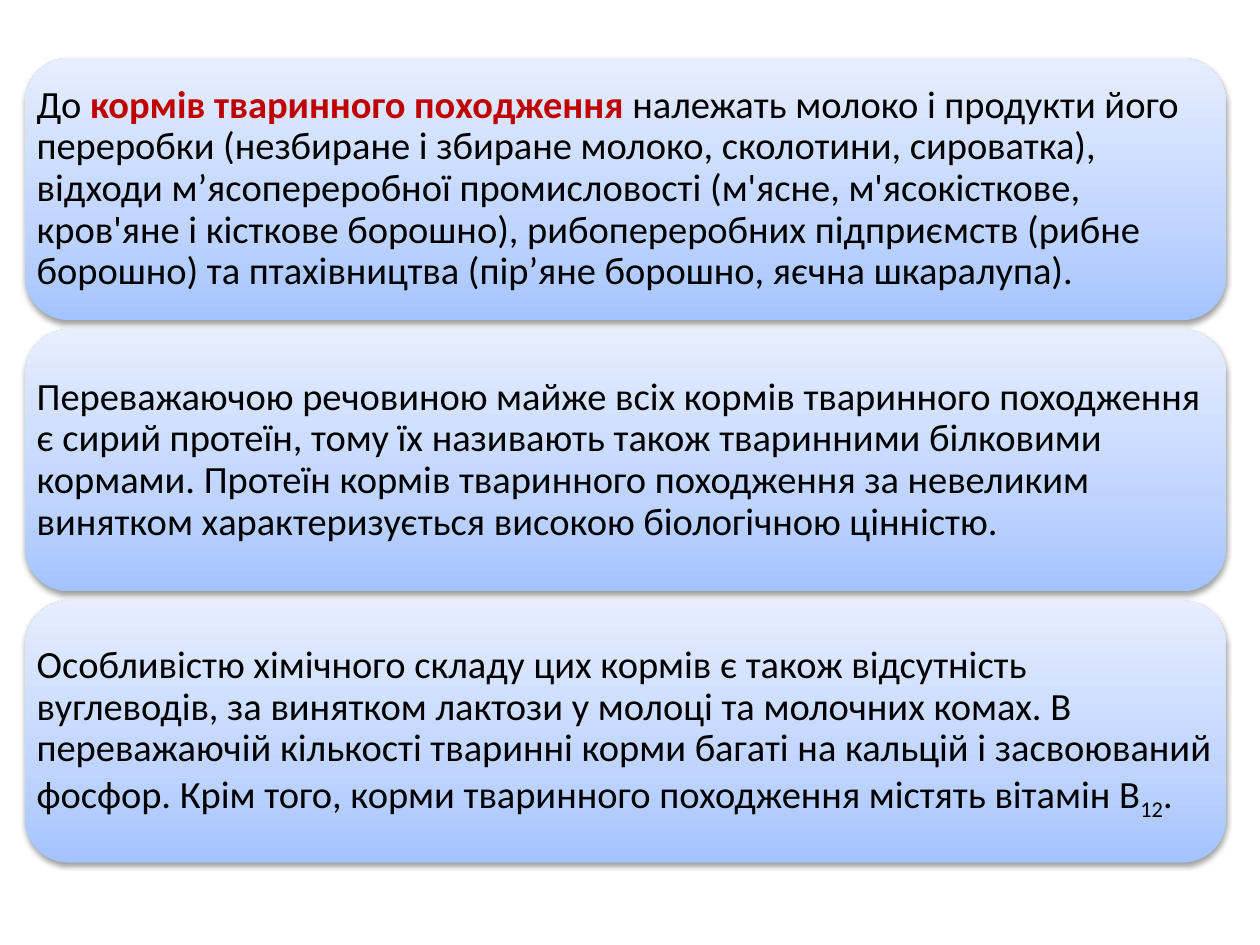
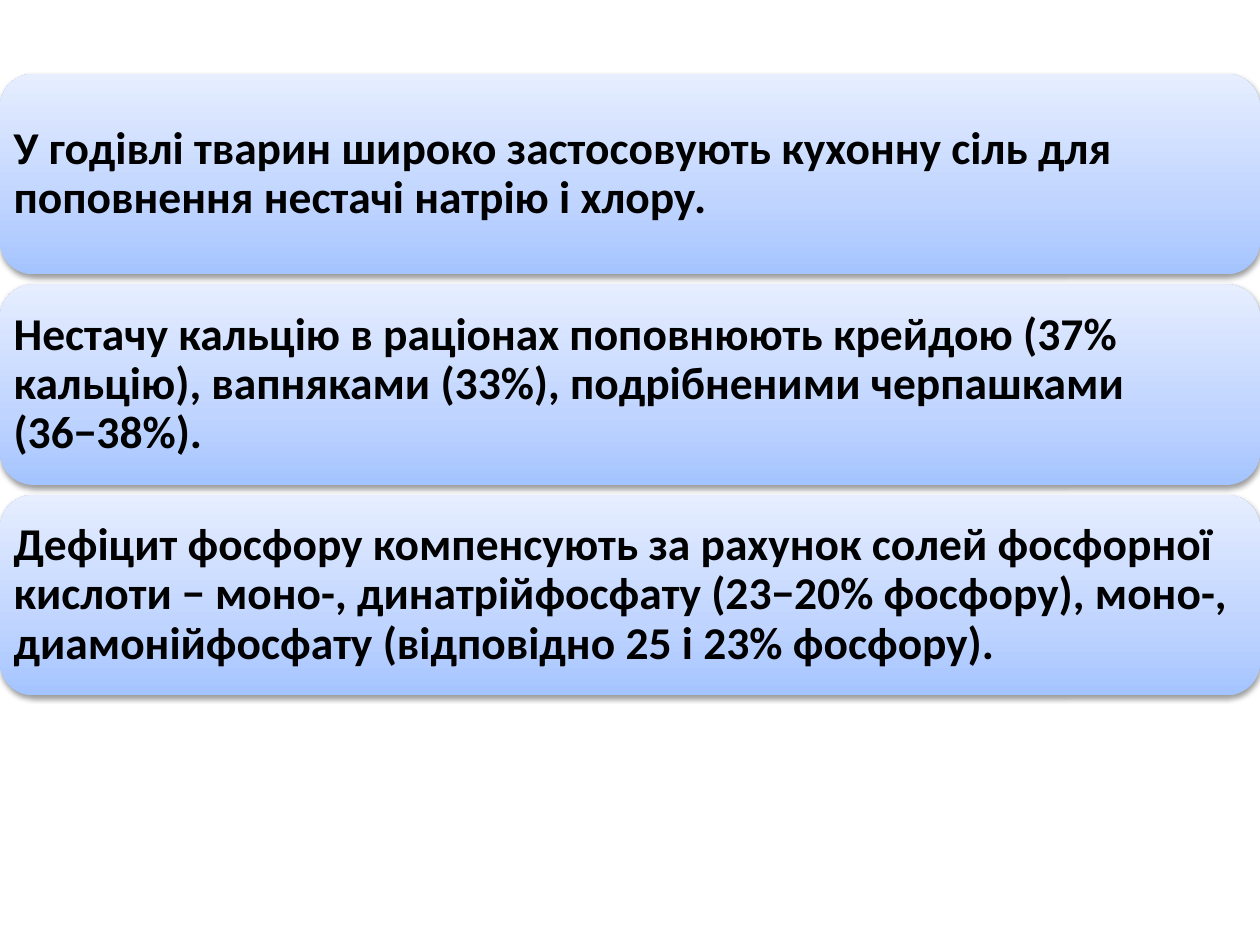
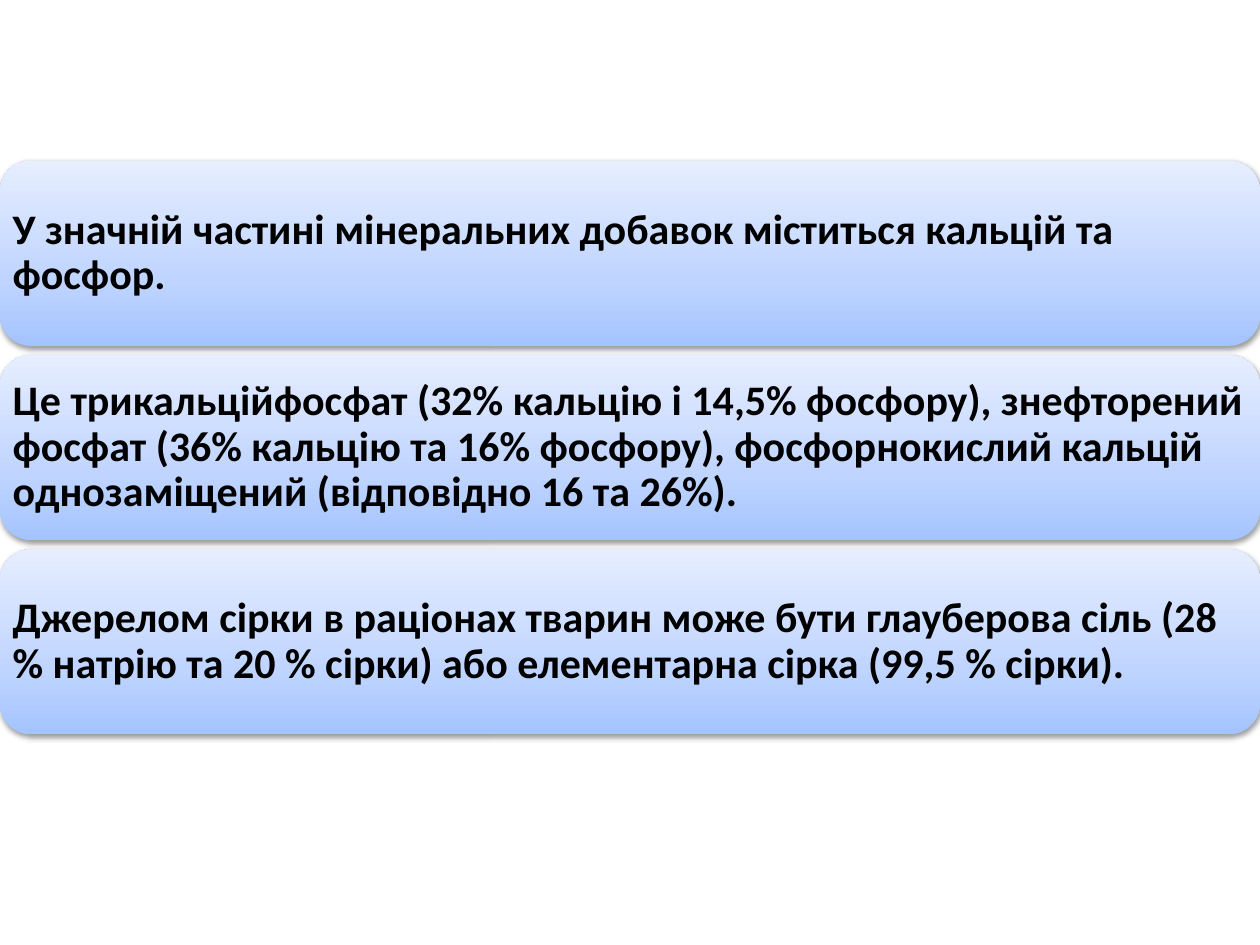
"""Build three slides of stacked text panels about animal and mineral feeds."""
from dataclasses import dataclass

from lxml import etree
from pptx import Presentation
from pptx.dml.color import RGBColor
from pptx.enum.shapes import MSO_SHAPE
from pptx.enum.text import MSO_ANCHOR, PP_ALIGN
from pptx.oxml import parse_xml
from pptx.oxml.ns import nsdecls, qn
from pptx.util import Pt

ROUNDED = MSO_SHAPE.ROUNDED_RECTANGLE
MIDDLE = MSO_ANCHOR.MIDDLE
LEFT = PP_ALIGN.LEFT


@dataclass(frozen=True)
class Theme:
    font: str = "Calibri"
    text: str = "000000"
    accent: str = "C00000"
    gradient: tuple = ((0, "A4C4FF"), (35, "BFD4FF"), (100, "E6EEFF"))
    animal_size: int = 22
    salt_size: int = 26
    mineral_size: int = 24
    inset_ratio: float = 0.3
    corner_inset: float = 0.0488


THEME = Theme()

STOPS = "".join(
    f'<a:gs pos="{position * 1000}"><a:srgbClr val="{color}"/></a:gs>'
    for position, color in THEME.gradient
)
GRADIENT = (
    f'<a:gradFill {nsdecls("a")} rotWithShape="1"><a:gsLst>{STOPS}</a:gsLst>'
    '<a:lin ang="16200000" scaled="0"/></a:gradFill>'
)
SHADOW = (
    f'<a:outerShdw {nsdecls("a")} blurRad="40000" dist="20000" dir="5400000" rotWithShape="0">'
    '<a:srgbClr val="000000"><a:alpha val="38000"/></a:srgbClr></a:outerShdw>'
)

SLIDES = [
    {
        "left": 14.4, "top": 33.1, "width": 686.2, "height": 149.8, "pitch": 155,
        "size": THEME.animal_size, "bold": False,
        "panels": [
            [
                ("До\u00a0".replace("\u00a0", " "), "plain"),
                ("кормів тваринного походження", "accent"),
                (" належать молоко і продукти його переробки (незбиране і збиране молоко, "
                 "сколотини, сироватка), відходи м’ясопереробної промисловості (м'ясне, "
                 "м'ясокісткове, кров'яне і кісткове борошно), рибопереробних підприємств "
                 "(рибне борошно) та птахівництва (пір’яне борошно, яєчна шкаралупа).", "plain"),
            ],
            [
                ("Переважаючою речовиною майже всіх кормів тваринного походження є сирий "
                 "протеїн, тому їх називають також тваринними білковими кормами. Протеїн "
                 "кормів тваринного походження за невеликим винятком характеризується "
                 "високою біологічною цінністю.", "plain"),
            ],
            [
                ("Особливістю хімічного складу цих кормів є також відсутність вуглеводів, "
                 "за винятком лактози у молоці та молочних комах. В переважаючій кількості "
                 "тваринні корми багаті на кальцій і засвоюваний фосфор. Крім того, корми "
                 "тваринного походження містять вітамін В", "plain"),
                ("12", "subscript"),
                (".", "plain"),
            ],
        ],
    },
    {
        "left": 0, "top": 42.2, "width": 720, "height": 114.6, "pitch": 120.3,
        "size": THEME.salt_size, "bold": True,
        "panels": [
            [("У годівлі тварин широко застосовують кухонну сіль для поповнення нестачі "
              "натрію і хлору.", "plain")],
            [("Нестачу кальцію в раціонах поповнюють крейдою (37% кальцію), вапняками (33%), "
              "подрібненими черпашками (36−38%).", "plain")],
            [("Дефіцит фосфору компенсують за рахунок солей фосфорної кислоти − моно-, "
              "динатрійфосфату (23−20% фосфору), моно-, диамонійфосфату (відповідно 25 і 23% "
              "фосфору).", "plain")],
        ],
    },
    {
        "left": 0, "top": 91.9, "width": 720, "height": 105.8, "pitch": 111,
        "size": THEME.mineral_size, "bold": True,
        "panels": [
            [("У значній частині мінеральних добавок міститься кальцій та фосфор.", "plain")],
            [("Це трикальційфосфат (32% кальцію і 14,5% фосфору), знефторений фосфат (36% "
              "кальцію та 16% фосфору), фосфорнокислий кальцій однозаміщений (відповідно 16 "
              "та 26%).", "plain")],
            [("Джерелом сірки в раціонах тварин може бути глауберова сіль (28 % натрію та "
              "20 % сірки) або елементарна сірка (99,5 % сірки).", "plain")],
        ],
    },
]


def add_panel(slide, left, top, width, height):
    """Add a rounded panel with the shared gradient and shadow."""
    shape = slide.shapes.add_shape(ROUNDED, Pt(left), Pt(top), Pt(width), Pt(height))
    shape.line.fill.background()
    shape.shadow.inherit = False
    properties = shape.element.spPr
    properties.find(qn("a:ln")).addprevious(parse_xml(GRADIENT))
    properties.find(qn("a:effectLst")).append(parse_xml(SHADOW))
    return shape


def add_text(shape, runs, size, bold, margin):
    """Write the runs as one left-aligned paragraph in the panel."""
    frame = shape.text_frame
    frame.word_wrap = True
    frame.vertical_anchor = MIDDLE
    frame.margin_left = frame.margin_right = Pt(margin)
    frame.margin_top = frame.margin_bottom = Pt(margin)
    paragraph = frame.paragraphs[0]
    paragraph.alignment = LEFT
    paragraph.line_spacing = 0.9
    space_after = etree.SubElement(paragraph._p.get_or_add_pPr(), qn("a:spcAft"))
    etree.SubElement(space_after, qn("a:spcPct")).set("val", "35000")
    for text, style in runs:
        run = paragraph.add_run()
        run.text = text
        run.font.name = THEME.font
        run.font.size = Pt(size)
        run.font.bold = bold or style == "accent"
        color = THEME.accent if style == "accent" else THEME.text
        run.font.color.rgb = RGBColor.from_string(color)
        if style == "subscript":
            run._r.get_or_add_rPr().set("baseline", "-25000")


presentation = Presentation()
presentation.slide_width = Pt(720)
presentation.slide_height = Pt(540)
blank_layout = presentation.slide_layouts[6]

for content in SLIDES:
    slide = presentation.slides.add_slide(blank_layout)
    size, height = content["size"], content["height"]
    margin = size * THEME.inset_ratio - height * THEME.corner_inset
    for index, runs in enumerate(content["panels"]):
        top = content["top"] + index * content["pitch"]
        shape = add_panel(slide, content["left"], top, content["width"], height)
        add_text(shape, runs, size, content["bold"], margin)

presentation.save("out.pptx")
